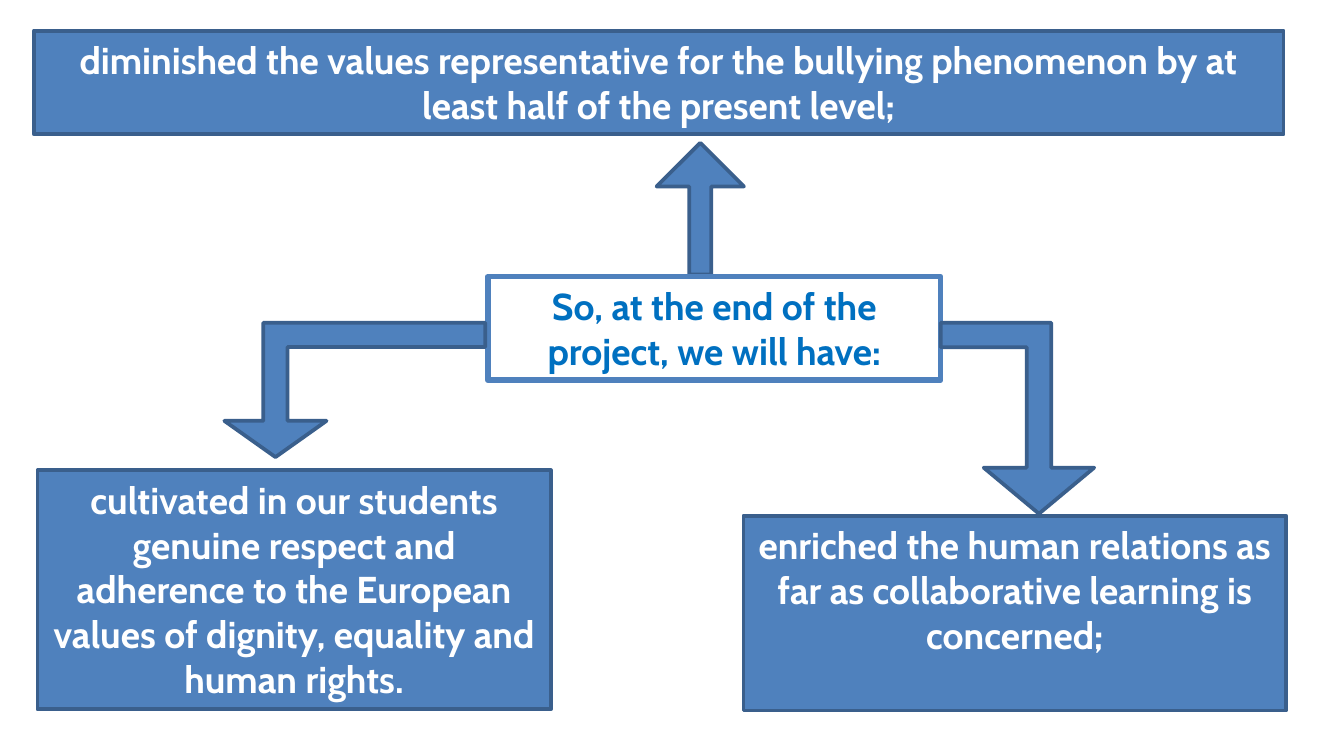
"""Build the slide of expected project results around a central statement."""
from pptx import Presentation
from pptx.dml.color import RGBColor
from pptx.enum.shapes import MSO_SHAPE
from pptx.enum.text import MSO_ANCHOR, PP_ALIGN
from pptx.util import Cm, Pt

RECTANGLE = MSO_SHAPE.RECTANGLE
RIGHT_ARROW = MSO_SHAPE.RIGHT_ARROW
BENT_ARROW = MSO_SHAPE.BENT_UP_ARROW
TOP = MSO_ANCHOR.TOP
CENTER = PP_ALIGN.CENTER

BLUE = RGBColor(0x4F, 0x81, 0xBD)
DARK_BLUE = RGBColor(0x3A, 0x5F, 0x8C)
BRIGHT_BLUE = RGBColor(0x00, 0x70, 0xC0)
WHITE = RGBColor(0xFF, 0xFF, 0xFF)


class SlideBuilder:
    font = {"name": "Cabin", "size": Pt(20), "bold": True}
    frame = {"word_wrap": True, "vertical_anchor": TOP}

    def __init__(self, slide):
        self.slide = slide

    def shape(self, kind, place, fill=BLUE, line=DARK_BLUE, width=2):
        shape = self.slide.shapes.add_shape(kind, *map(Cm, place))
        shape.shadow.inherit = False
        shape.fill.solid()
        shape.fill.fore_color.rgb = fill
        shape.line.color.rgb = line
        shape.line.width = Pt(width)
        return shape

    def box(self, text, place, color=WHITE, **style):
        frame = self.shape(RECTANGLE, place, **style).text_frame
        for name, value in self.frame.items():
            setattr(frame, name, value)
        para = frame.paragraphs[0]
        para.alignment = CENTER
        span = para.add_run()
        span.text = text
        for name, value in self.font.items():
            setattr(span.font, name, value)
        span.font.color.rgb = color

    def arrow(self, kind, place, rotation, adjustments, flipped=False):
        arrow = self.shape(kind, place)
        arrow.rotation = rotation
        for index, value in enumerate(adjustments):
            arrow.adjustments[index] = value
        if flipped:
            arrow._element.spPr.get_or_add_xfrm().set("flipH", "1")


def main():
    deck = Presentation()
    deck.slide_width, deck.slide_height = Cm(25.4), Cm(14.29)
    page = SlideBuilder(deck.slides.add_slide(deck.slide_layouts[6]))

    page.box("diminished the values representative for the bullying phenomenon "
             "by at least half of the present level;", (0.64, 0.58, 23.62, 1.96))
    page.arrow(RIGHT_ARROW, (11.99, 3.12, 2.49, 1.65), 270, (0.25, 0.5))
    page.box("enriched the human relations as far as collaborative learning "
             "is concerned;", (14.05, 9.75, 10.26, 3.68))
    page.box("cultivated in our students genuine respect and adherence to the "
             "European values of dignity, equality and human rights.",
             (0.71, 8.89, 9.7, 4.52))
    page.box("So, at the end of the project, we will have:",
             (9.22, 5.23, 8.56, 1.96), BRIGHT_BLUE,
             fill=WHITE, line=BLUE, width=3)
    page.arrow(BENT_ARROW, (4.24, 6.1, 4.93, 2.54), 180, (0.18, 0.38, 0.27))
    page.arrow(BENT_ARROW, (17.78, 6.1, 2.9, 3.61), 180, (0.16, 0.36, 0.3),
               flipped=True)

    deck.save("out.pptx")


if __name__ == "__main__":
    main()
